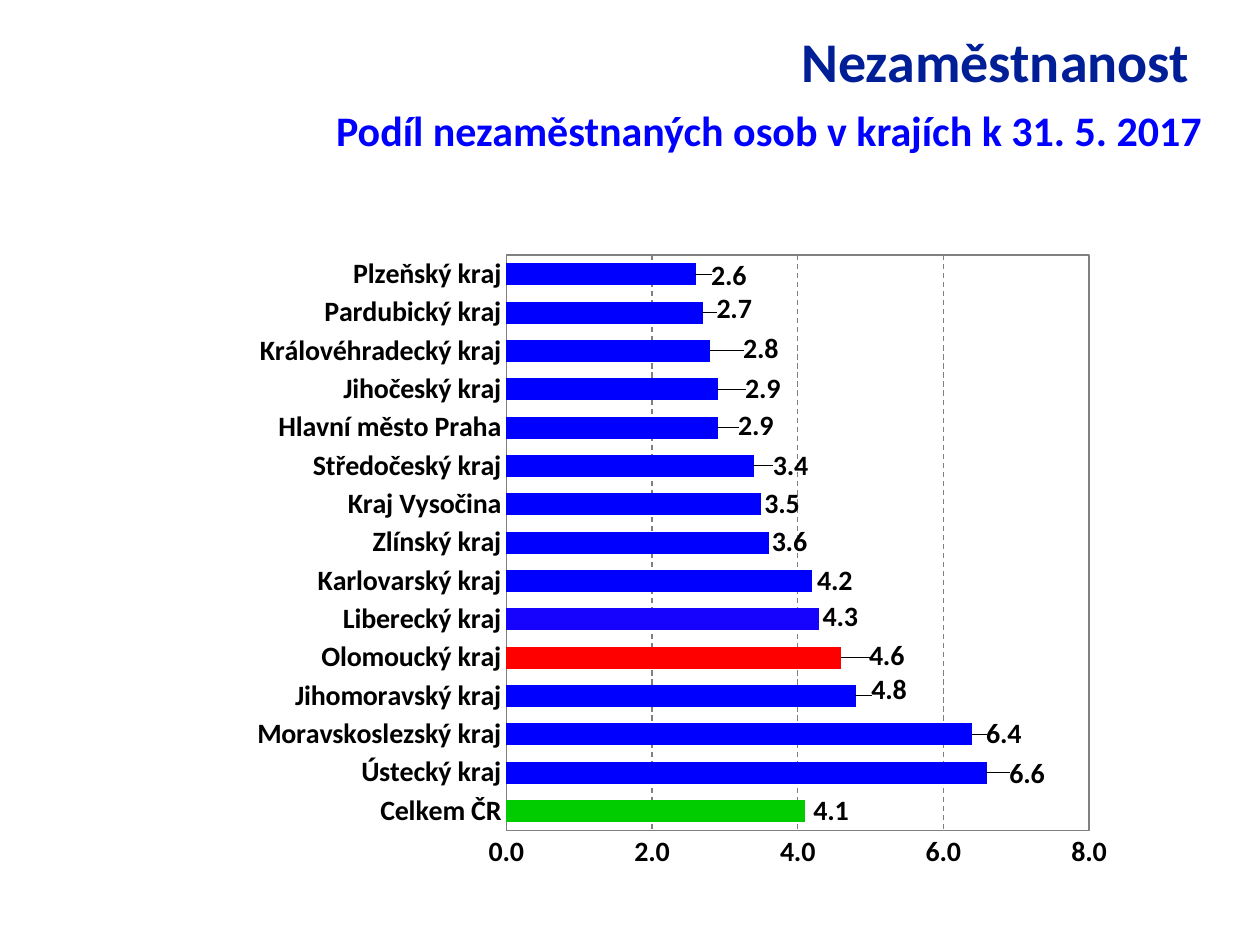
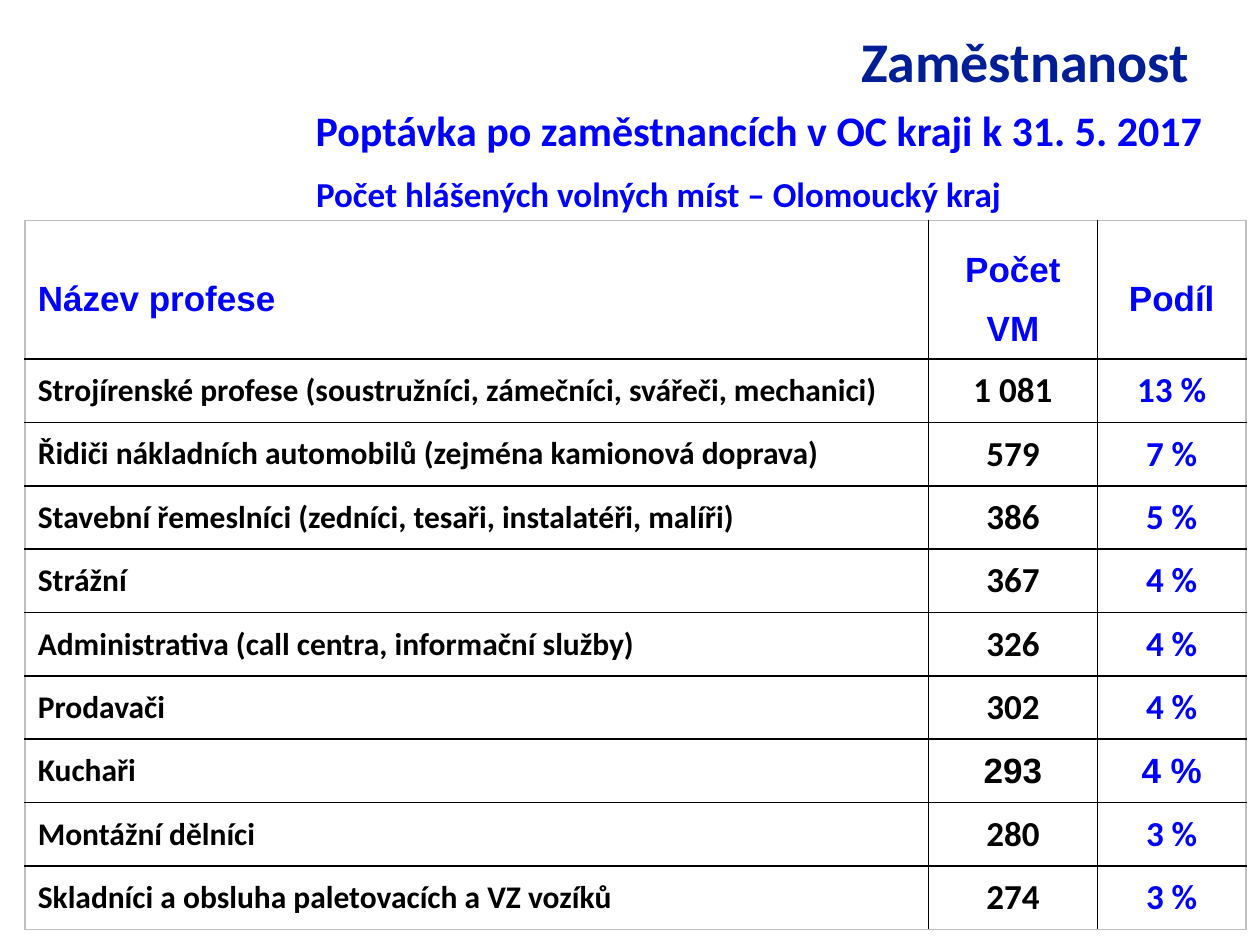
from lxml.etree import SubElement
from pptx import Presentation
from pptx.chart.data import CategoryChartData
from pptx.dml.color import RGBColor
from pptx.enum.chart import XL_CHART_TYPE, XL_LABEL_POSITION, XL_TICK_MARK
from pptx.enum.dml import MSO_LINE
from pptx.enum.text import MSO_ANCHOR, PP_ALIGN
from pptx.oxml import parse_xml
from pptx.oxml.ns import nsdecls, qn
from pptx.util import Pt

NAVY, BLUE, BLACK, GREY, PALE = "001E96", "0000FF", "000000", "808080", "BFBFBF"
HEADING_BOX = (172.8, 9.4, 521.3, 45.4)

REGIONS = [
    ("Celkem ČR", 4.1, 2, 0), ("Ústecký kraj", 6.6, 10, 1),
    ("Moravskoslezský kraj", 6.4, 5, 0), ("Jihomoravský kraj", 4.8, 6, -3),
    ("Olomoucký kraj", 4.6, 13, -1), ("Liberecký kraj", 4.3, -1, -1),
    ("Karlovarský kraj", 4.2, 0, 0), ("Zlínský kraj", 3.6, -1, 0),
    ("Kraj Vysočina", 3.5, -1, 0), ("Středočeský kraj", 3.4, 8, 0),
    ("Hlavní město Praha", 2.9, 9, -1), ("Jihočeský kraj", 2.9, 13, 0),
    ("Královéhradecký kraj", 2.8, 16, -1), ("Pardubický kraj", 2.7, 5, -2),
    ("Plzeňský kraj", 2.6, 6, 1),
]
BAR_COLOURS = {0: "00CC00", 4: "FF0000", 5: "1503FD"}

PROFESSIONS = [
    ("Název profese", "Počet VM", "Podíl"),
    ("Strojírenské profese (soustružníci, zámečníci, svářeči, mechanici)", "1 081", "13 %"),
    ("Řidiči nákladních automobilů (zejména kamionová doprava)", "579", "7 %"),
    ("Stavební řemeslníci (zedníci, tesaři, instalatéři, malíři)", "386", "5 %"),
    ("Strážní", "367", "4 %"),
    ("Administrativa (call centra, informační služby)", "326", "4 %"),
    ("Prodavači", "302", "4 %"),
    ("Kuchaři", "293", "4 %"),
    ("Montážní dělníci", "280", "3 %"),
    ("Skladníci a obsluha paletovacích a VZ vozíků", "274", "3 %"),
]


def colour(value):
    return RGBColor.from_string(value)


def style_font(font, size, shade=BLACK, name="Calibri"):
    font.size, font.name, font.bold = Pt(size), name, True
    font.color.rgb = colour(shade)


def write(frame, text, size, shade=BLACK, name="Calibri", align=PP_ALIGN.LEFT,
          spacing=None, anchor=MSO_ANCHOR.TOP, wrap=True):
    frame.word_wrap = wrap
    frame.vertical_anchor = anchor
    paragraph = frame.paragraphs[0]
    paragraph.alignment = align
    paragraph.line_spacing = spacing
    run = paragraph.add_run()
    run.text = text
    style_font(run.font, size, shade, name)


def add_heading(slide, box, title, subtitle, extra_left=0):
    left, top, width, height = box
    heading = slide.shapes.title
    heading.left, heading.top, heading.width, heading.height = map(Pt, box)
    heading.text_frame.margin_right = Pt(14.4)
    heading.text_frame.margin_top = Pt(6)
    write(heading.text_frame, title, 32, NAVY, align=PP_ALIGN.RIGHT)
    subheading = slide.shapes.add_textbox(
        Pt(left - extra_left), Pt(top + height), Pt(width + extra_left), Pt(height))
    subheading.text_frame.margin_top = Pt(4.7)
    write(subheading.text_frame, subtitle, 24, BLUE, align=PP_ALIGN.RIGHT)


def place_plot(chart, left, top, width, height):
    area = chart._chartSpace.find(".//" + qn("c:plotArea"))
    for old in area.findall(qn("c:layout")):
        area.remove(old)
    layout = parse_xml(f"<c:layout {nsdecls('c')}/>")
    manual = SubElement(layout, qn("c:manualLayout"))
    settings = dict(layoutTarget="inner", xMode="edge", yMode="edge",
                    x=left, y=top, w=width, h=height)
    for tag, value in settings.items():
        SubElement(manual, qn("c:" + tag)).set("val", str(value))
    area.insert(0, layout)
    area.append(parse_xml(
        f'<c:spPr {nsdecls("c", "a")}><a:noFill/><a:ln w="9525"><a:solidFill>'
        f'<a:srgbClr val="{GREY}"/></a:solidFill></a:ln></c:spPr>'))


def shift_labels(series, width, height):
    for label, (_, _, right, down) in zip(series._element.iter(qn("c:dLbl")), REGIONS):
        layout = parse_xml(f"<c:layout {nsdecls('c')}/>")
        manual = SubElement(layout, qn("c:manualLayout"))
        for tag, value in (("x", right / width), ("y", down / height)):
            SubElement(manual, qn("c:" + tag)).set("val", f"{value:.4f}")
        label.find(qn("c:idx")).addnext(layout)


def add_region_chart(slide, box):
    data = CategoryChartData(number_format="0.0")
    data.categories = [region[0] for region in REGIONS]
    data.add_series("Series 1", [region[1] for region in REGIONS])
    chart = slide.shapes.add_chart(XL_CHART_TYPE.BAR_CLUSTERED, *map(Pt, box), data).chart
    chart.has_legend = chart.has_title = False
    style_font(chart.font, 16)
    for axis in (chart.category_axis, chart.value_axis):
        axis.major_tick_mark = axis.minor_tick_mark = XL_TICK_MARK.NONE
        axis.format.line.color.rgb = colour(GREY)
        style_font(axis.tick_labels.font, 16)
    shares = chart.value_axis
    shares.minimum_scale, shares.maximum_scale, shares.major_unit = 0, 8, 2
    shares.tick_labels.number_format = "0.0"
    shares.tick_labels.number_format_is_linked = False
    gridlines = shares.major_gridlines.format.line
    gridlines.color.rgb = colour(GREY)
    gridlines.width = Pt(0.75)
    gridlines.dash_style = MSO_LINE.DASH
    bars = chart.plots[0]
    bars.gap_width, bars.overlap, bars.vary_by_categories = 74, -24, False
    series = bars.series[0]
    series.format.fill.solid()
    series.format.fill.fore_color.rgb = colour(BLUE)
    labels = series.data_labels
    labels.show_value = True
    labels.number_format, labels.number_format_is_linked = "0.0", False
    style_font(labels.font, 16)
    for index in range(len(REGIONS)):
        point = series.points[index]
        style_font(point.data_label.font, 16)
        point.data_label.position = XL_LABEL_POSITION.OUTSIDE_END
        if index in BAR_COLOURS:
            point.format.fill.solid()
            point.format.fill.fore_color.rgb = colour(BAR_COLOURS[index])
    shift_labels(series, *box[2:])
    place_plot(chart, 0.335, 0.025, 0.615, 0.913)


def add_borders(cell, outer_sides):
    properties = cell._tc.get_or_add_tcPr()
    for position, side in enumerate("LRTB"):
        shade = PALE if side in outer_sides else BLACK
        properties.insert(position, parse_xml(
            f'<a:ln{side} {nsdecls("a")} w="12700"><a:solidFill>'
            f'<a:srgbClr val="{shade}"/></a:solidFill></a:ln{side}>'))


def add_profession_table(slide, box):
    last_row, last_column = len(PROFESSIONS) - 1, 2
    table = slide.shapes.add_table(len(PROFESSIONS), 3, *map(Pt, box)).table
    table.first_row = table.horz_banding = False
    for column, width in zip(table.columns, (516.2, 96.5, 85)):
        column.width = Pt(width)
    for r, texts in enumerate(PROFESSIONS):
        table.rows[r].height = Pt(36.2 if r else 43.2)
        for c, text in enumerate(texts):
            cell = table.cell(r, c)
            cell.fill.background()
            cell.vertical_anchor = MSO_ANCHOR.MIDDLE
            in_arial = r == 0 or (texts[0] == "Kuchaři" and c > 0)
            write(cell.text_frame, text, 18 if r and c == 0 else 20,
                  BLUE if r == 0 or c == last_column else BLACK,
                  "Arial" if in_arial else "Calibri",
                  PP_ALIGN.CENTER if c else PP_ALIGN.LEFT,
                  spacing=None if r else 1.5, anchor=MSO_ANCHOR.MIDDLE)
            edges = {"L": c == 0, "R": c == last_column, "T": r == 0, "B": r == last_row}
            add_borders(cell, [side for side, outer in edges.items() if outer])


def add_unemployment_slide(deck):
    slide = deck.slides.add_slide(deck.slide_layouts[5])
    add_heading(slide, HEADING_BOX, "Nezaměstnanost",
                "Podíl nezaměstnaných osob v krajích k 31. 5. 2017")
    add_region_chart(slide, (108, 136.8, 541.4, 360))


def add_employment_slide(deck):
    slide = deck.slides.add_slide(deck.slide_layouts[5])
    add_heading(slide, HEADING_BOX, "Zaměstnanost",
                "Poptávka po zaměstnancích v OC kraji k 31. 5. 2017", extra_left=17.3)
    caption = slide.shapes.add_textbox(Pt(173.5), Pt(95), Pt(409), Pt(31.7))
    write(caption.text_frame, "Počet hlášených volných míst – Olomoucký kraj",
          20, BLUE, wrap=False)
    add_profession_table(slide, (14.4, 126, 697.7, 369))


def main():
    deck = Presentation()
    deck.slide_width, deck.slide_height = Pt(720), Pt(540)
    add_unemployment_slide(deck)
    add_employment_slide(deck)
    deck.save("out.pptx")


if __name__ == "__main__":
    main()
